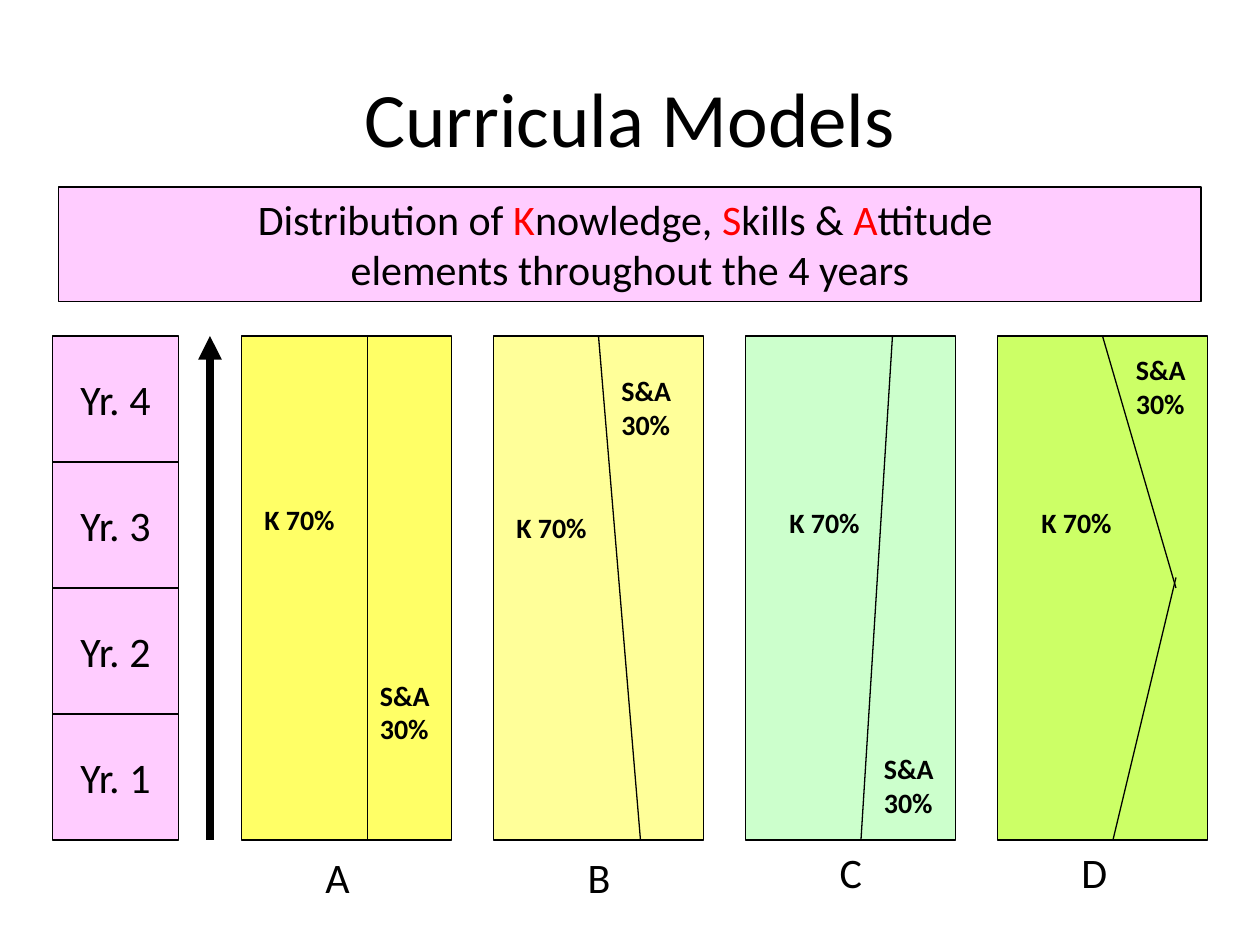
from collections import namedtuple

from lxml.etree import SubElement
from pptx import Presentation
from pptx.dml.color import RGBColor
from pptx.enum.shapes import MSO_CONNECTOR, MSO_SHAPE
from pptx.enum.text import MSO_ANCHOR as Anchor, MSO_AUTO_SIZE as AutoSize, PP_ALIGN as Align
from pptx.oxml.ns import qn
from pptx.util import Pt

PX = 7620
FONT = "Calibri"
COLORS = {
    "ink": "000000", "accent": "FF0000", "pink": "FFCCFF", "yellow": "FFFF66",
    "cream": "FFFF99", "mint": "CCFFCC", "lime": "CCFF66",
}
Box = namedtuple("Box", "left top width height")
Model = namedtuple("Model", "name fill dividers knowledge skills caption")
MODELS = [
    Model("A", "yellow", [(120, 480, 120, 0)], (10, 153), (120, 320), (68, 485, 53, 60)),
    Model("B", "cream", [(140, 480, 100, 0)], (10, 160), (110, 30), (78, 485, 50, 60)),
    Model("C", "mint", [(140, 0, 110, 480)], (30, 156), (120, 390), (78, 480, 50, 60)),
    Model("D", "lime", [(100, 0, 170, 240), (170, 230, 110, 480)],
          (30, 156), (120, 10), (68, 480, 53, 60)),
]
BANNER = [
    [("Distribution of ", "ink"), ("K", "accent"), ("nowledge, ", "ink"), ("S", "accent"),
     ("kills & ", "ink"), ("A", "accent"), ("ttitude ", "ink")],
    [("elements throughout the 4 years", "ink")],
]


def color(name):
    """Return the named colour."""
    return RGBColor.from_string(COLORS[name])


def emu(lengths):
    """Turn px lengths into EMU."""
    return [length * PX for length in lengths]


def style(span, size, bold=False, ink="ink"):
    """Format one run."""
    span.font.name, span.font.size, span.font.bold = FONT, Pt(size), bold
    span.font.color.rgb = color(ink)


def write(frame, text, size, bold=False, align=Align.LEFT):
    """Fill a text frame with uniformly formatted text."""
    frame.text = text
    for para in frame.paragraphs:
        para.alignment = align
        for span in para.runs:
            style(span, size, bold)


def add_panel(page, box, fill):
    """Add an outlined rectangle."""
    panel = page.shapes.add_shape(MSO_SHAPE.RECTANGLE, *emu(box))
    panel.shadow.inherit = False
    panel.fill.solid()
    panel.fill.fore_color.rgb = color(fill)
    panel.line.color.rgb = color("ink")
    panel.line.width = Pt(0.75)
    return panel


def add_line(page, ends, width=0.75):
    """Add a straight line without a shadow."""
    line = page.shapes.add_connector(MSO_CONNECTOR.STRAIGHT, *emu(ends))
    line.line.color.rgb = color("ink")
    line.line.width = Pt(width)
    SubElement(line._element.spPr, qn("a:effectLst"))
    return line


def add_label(page, box, text, size, bold=False):
    """Add a text box that fits its text."""
    frame = page.shapes.add_textbox(*emu(box)).text_frame
    write(frame, text, size, bold)
    frame.word_wrap = False
    frame.auto_size = AutoSize.SHAPE_TO_FIT_TEXT


def place_title(page, box):
    """Place the slide title."""
    title = page.shapes.title
    title.left, title.top, title.width, title.height = emu(box)
    title.text_frame.vertical_anchor = Anchor.MIDDLE
    write(title.text_frame, "Curricula Models", 44, align=Align.CENTER)


def add_banner(page, box):
    """Add the subtitle banner with its accented initials."""
    frame = add_panel(page, box, "pink").text_frame
    frame.word_wrap = True
    frame.vertical_anchor = Anchor.TOP
    frame.auto_size = AutoSize.SHAPE_TO_FIT_TEXT
    for index, pieces in enumerate(BANNER):
        para = frame.add_paragraph() if index else frame.paragraphs[0]
        para.alignment = Align.CENTER
        for text, ink in pieces:
            span = para.add_run()
            span.text = text
            style(span, 24, ink=ink)


def add_years(page, box):
    """Stack the four years and the upward arrow beside them."""
    step = box.height // 4
    for row in range(4):
        cell = Box(box.left, box.top + row * step, box.width, step)
        frame = add_panel(page, cell, "pink").text_frame
        frame.word_wrap = False
        frame.vertical_anchor = Anchor.MIDDLE
        write(frame, f"Yr. {4 - row}", 24, align=Align.CENTER)
    across = box.left + box.width + 30
    arrow = add_line(page, (across, box.top + box.height, across, box.top), 4.5)
    SubElement(arrow.line._get_or_add_ln(), qn("a:tailEnd"), type="triangle")


def add_model(page, box, model):
    """Add one curriculum column with its dividers and labels."""
    def inside(left, top, width, height):
        return Box(box.left + left, box.top + top, width, height)

    add_panel(page, box, model.fill)
    for start_x, start_y, end_x, end_y in model.dividers:
        add_line(page, (box.left + start_x, box.top + start_y,
                        box.left + end_x, box.top + end_y))
    add_label(page, inside(*model.knowledge, 106, 44), "K 70%", 16, True)
    add_label(page, inside(*model.skills, 80, 77), "S&A\n30%", 16, True)
    add_label(page, inside(*model.caption), model.name, 24)


def main():
    """Build and save the slide."""
    deck = Presentation()
    deck.slide_width, deck.slide_height = emu((1200, 900))
    page = deck.slides.add_slide(deck.slide_layouts[5])
    place_title(page, Box(60, 36, 1080, 150))
    for index, model in enumerate(MODELS):
        add_model(page, Box(230 + 240 * index, 320, 200, 480), model)
    add_years(page, Box(50, 320, 120, 480))
    add_banner(page, Box(56, 178, 1088, 109))
    deck.save("out.pptx")


if __name__ == "__main__":
    main()
